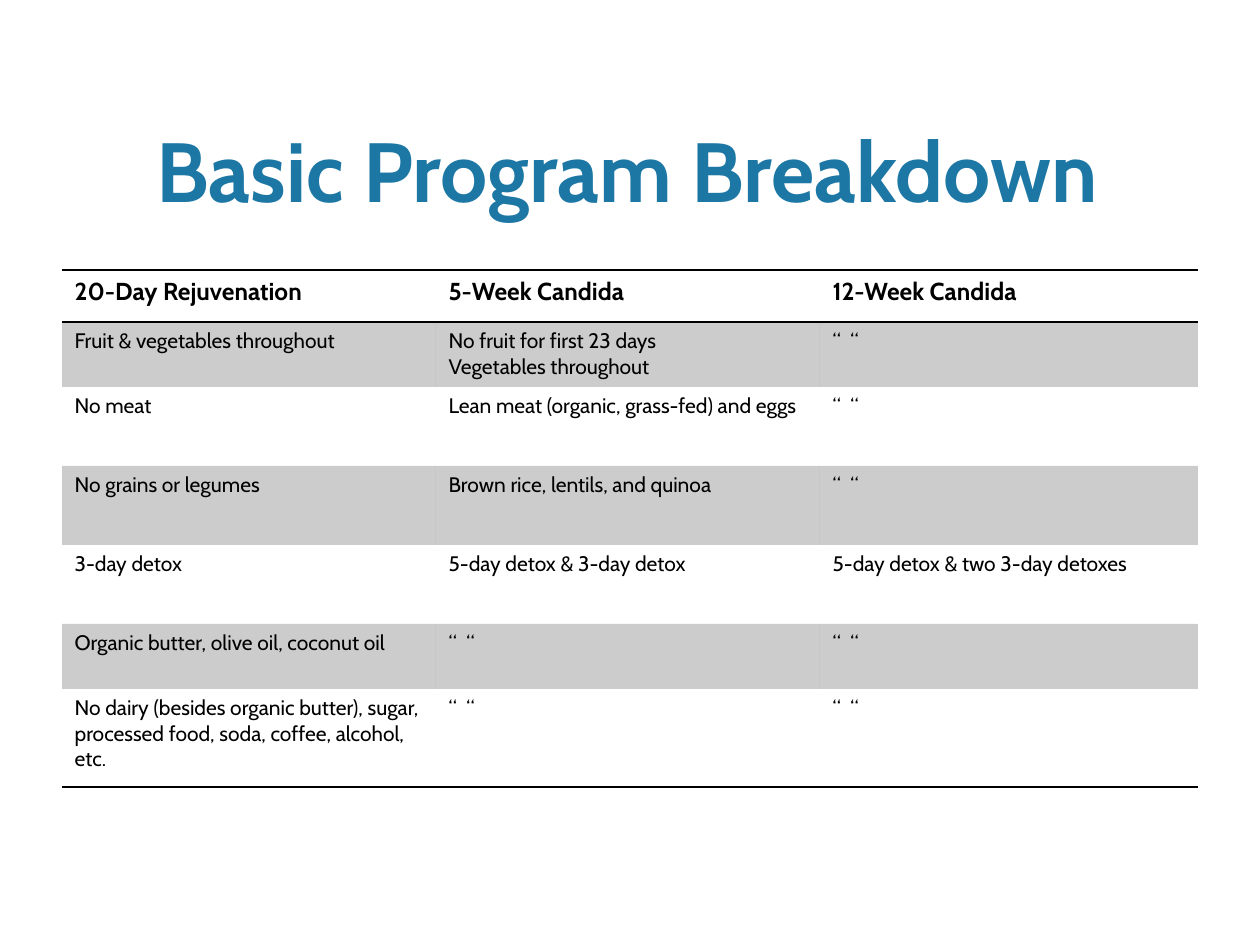
from dataclasses import dataclass

from lxml import etree
from pptx import Presentation
from pptx.dml.color import RGBColor
from pptx.enum.text import MSO_ANCHOR, MSO_AUTO_SIZE, PP_ALIGN
from pptx.oxml.ns import qn
from pptx.util import Emu, Pt

PX = 914400 // 126
CENTER, LEFT = PP_ALIGN.CENTER, PP_ALIGN.LEFT
MIDDLE = MSO_ANCHOR.MIDDLE
NO_AUTOFIT = MSO_AUTO_SIZE.NONE
TITLE_ONLY = 5
NO_STYLE = "{2D5ABB26-0587-4C30-8999-92F81FD0307C}"


@dataclass(frozen=True)
class Theme:
    font: str = "Cabin"
    title: str = "1C77A4"
    ink: str = "000000"
    band_alpha: int = 20
    title_size: int = 48
    head_size: int = 14
    body_size: int = 12
    rule: int = 1


THEME = Theme()
DITTO = "“  “"
COLUMNS = [374, 384, 378]
ROWS = [52, 65, 79, 79, 79, 65, 98]
PROGRAMS = [
    ["20-Day Rejuvenation", "5-Week Candida", "12-Week Candida"],
    ["Fruit & vegetables throughout",
     "No fruit for first 23 days\nVegetables throughout", DITTO],
    ["No meat", "Lean meat (organic, grass-fed) and eggs", DITTO],
    ["No grains or legumes", "Brown rice, lentils, and quinoa", DITTO],
    ["3-day detox", "5-day detox & 3-day detox",
     "5-day detox & two 3-day detoxes"],
    ["Organic butter, olive oil, coconut oil", DITTO, DITTO],
    ["No dairy (besides organic butter), sugar, processed food, soda, "
     "coffee, alcohol, etc.", DITTO, DITTO],
]


def px(n):
    return Emu(n * PX)


def write(tf, text, size, color=THEME.ink, bold=False, align=LEFT):
    tf.text = text
    for p in tf.paragraphs:
        p.alignment = align
        for r in p.runs:
            r.font.name = THEME.font
            r.font.size = Pt(size)
            r.font.bold = bold
            r.font.color.rgb = RGBColor.from_string(color)


def add_title(s, text, x, y, w, h):
    sp = s.shapes.title
    sp.left, sp.top, sp.width, sp.height = map(px, (x, y, w, h))
    tf = sp.text_frame
    tf.word_wrap = True
    tf.auto_size = NO_AUTOFIT
    tf.vertical_anchor = MIDDLE
    write(tf, text, THEME.title_size, THEME.title, True, CENTER)


def fill_band(cell):
    cell.fill.solid()
    cell.fill.fore_color.rgb = RGBColor.from_string(THEME.ink)
    color = cell._tc.tcPr.find(".//" + qn("a:srgbClr"))
    etree.SubElement(color, qn("a:alpha"), val=str(THEME.band_alpha * 1000))


def add_rules(cell, sides):
    tcPr = cell._tc.get_or_add_tcPr()
    for i, side in enumerate(sides):
        ln = etree.Element(qn("a:ln" + side), w=str(Pt(THEME.rule)))
        fill = etree.SubElement(ln, qn("a:solidFill"))
        etree.SubElement(fill, qn("a:srgbClr"), val=THEME.ink)
        tcPr.insert(i, ln)


def add_program_table(s, x, y):
    frame = s.shapes.add_table(len(ROWS), len(COLUMNS), px(x), px(y),
                               px(sum(COLUMNS)), px(sum(ROWS)))
    table = frame.table
    table._tbl.tblPr.find(qn("a:tableStyleId")).text = NO_STYLE
    for column, width in zip(table.columns, COLUMNS):
        column.width = px(width)
    rules = {0: "TB", len(ROWS) - 1: "B"}
    for i, (row, height, texts) in enumerate(zip(table.rows, ROWS, PROGRAMS)):
        row.height = px(height)
        head = i == 0
        size = THEME.head_size if head else THEME.body_size
        for cell, text in zip(row.cells, texts):
            write(cell.text_frame, text, size, bold=head)
            if i % 2:
                fill_band(cell)
            else:
                cell.fill.background()
            add_rules(cell, rules.get(i, ""))


def main():
    prs = Presentation()
    prs.slide_width, prs.slide_height = px(1260), px(945)
    s = prs.slides.add_slide(prs.slide_layouts[TITLE_ONLY])
    add_title(s, "Basic Program Breakdown", 39, 106, 1176, 125)
    add_program_table(s, 62, 270)
    prs.save("out.pptx")


if __name__ == "__main__":
    main()
